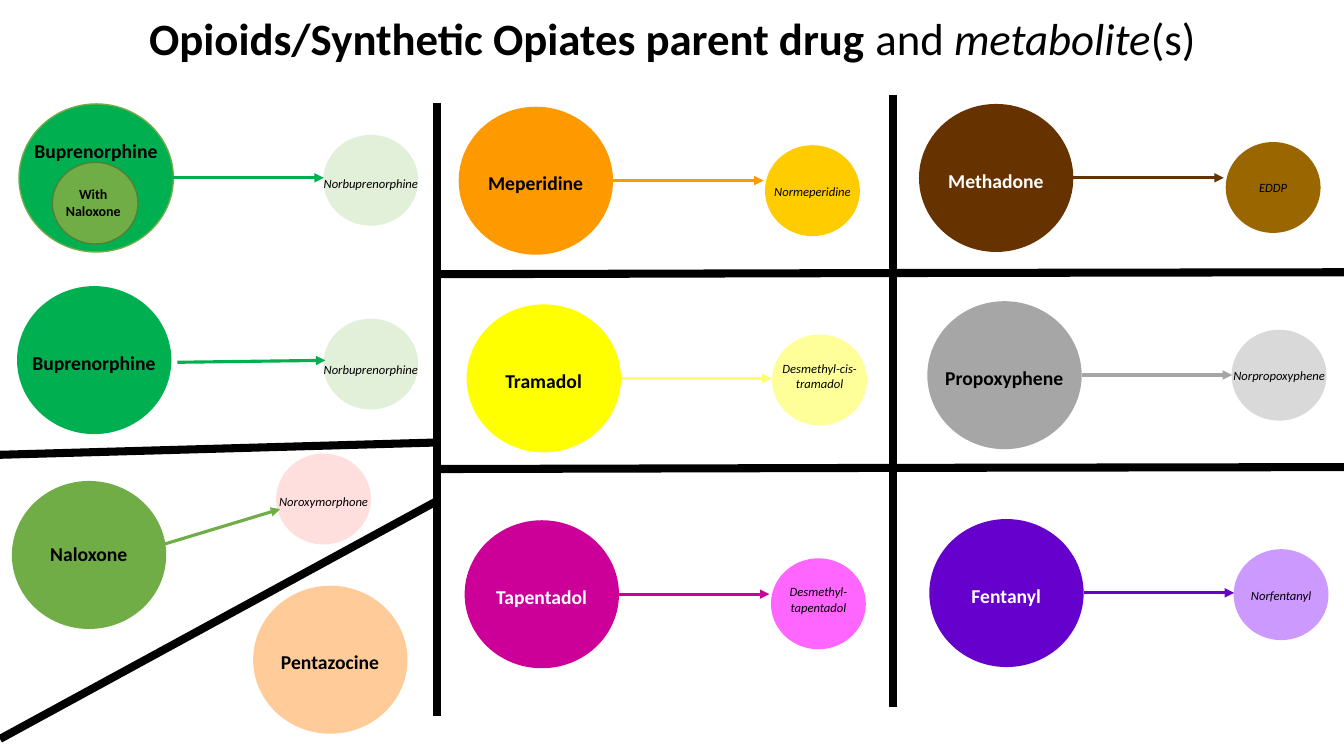
from lxml.etree import SubElement
from pptx import Presentation
from pptx.dml.color import RGBColor
from pptx.enum.shapes import MSO_CONNECTOR, MSO_SHAPE
from pptx.enum.text import MSO_ANCHOR, PP_ALIGN
from pptx.oxml.ns import qn
from pptx.util import Cm, Pt

PARENT_SIZE = (3.89, 3.73)
METABOLITE_SIZE = (2.39, 2.29)
NALOXONE_SIZE = (2.16, 2.06)
STRAIGHT_ARROW = (3.89, 1.86, 7.68, 1.86)
TITLE_FORMAT = {"size": Pt(32), "name": "Calibri"}
PARENT_FORMAT = {"size": Pt(14), "name": "Calibri", "bold": True}
ADDITIVE_FORMAT = {"size": Pt(10), "name": "Calibri", "bold": True}
METABOLITE_FORMAT = {"size": Pt(9), "name": "Calibri", "italic": True}

DRUGS = [
    {"name": "Buprenorphine", "box": (0.48, 2.62), "fill": "00B050", "outline": "70AD47",
     "label_top": 0.76, "additive": ["With", "Naloxone"],
     "metabolite": (["Norbuprenorphine"], 7.67, 0.78, "E2F0D9", 0.91)},
    {"name": "Buprenorphine", "box": (0.43, 7.21), "fill": "00B050",
     "arrow": (4.04, 1.92, 7.77, 1.87),
     "metabolite": (["Norbuprenorphine"], 7.72, 0.82, "E2F0D9", 0.97)},
    {"name": "Naloxone", "box": (0.3, 12.12), "fill": "70AD47", "label_top": 1.42,
     "arrow": (3.81, 1.6, 6.76, 0.71),
     "metabolite": (["Noroxymorphone"], 6.66, -0.69, "FFDFDD", 0.89)},
    {"name": "Pentazocine", "box": (6.38, 14.76), "fill": "FFCC99"},
    {"name": "Meperidine", "box": (11.56, 2.69), "fill": "FF9900",
     "metabolite": (["Normeperidine"], 7.72, 0.97, "FFCC00", 0.86)},
    {"name": "Tramadol", "box": (11.76, 7.67), "fill": "FFFF00", "arrow_color": "FFFF66",
     "metabolite": (["Desmethyl-cis-", "tramadol"], 7.7, 0.76, "FFFF99", 0.53)},
    {"name": "Tapentadol", "box": (11.71, 13.11), "fill": "CC0099", "text": "FFFFFF",
     "metabolite": (["Desmethyl-", "tapentadol"], 7.72, 0.96, "FF66FF", 0.53)},
    {"name": "Methadone", "box": (23.16, 2.62), "fill": "663300", "text": "FFFFFF",
     "metabolite": (["EDDP"], 7.73, 0.96, "996600", 0.84)},
    {"name": "Propoxyphene", "box": (23.37, 7.59), "fill": "A6A6A6",
     "metabolite": (["Norpropoxyphene"], 7.67, 0.72, "D9D9D9", 0.84)},
    {"name": "Fentanyl", "box": (23.42, 13.08), "fill": "6600CC", "text": "FFFFFF",
     "metabolite": (["Norfentanyl"], 7.67, 0.76, "CC99FF", 0.84)},
]


def color(value):
    return RGBColor.from_string(value)


def apply_format(font, values, font_color="000000"):
    for attribute, value in values.items():
        setattr(font, attribute, value)
    font.color.rgb = color(font_color)


def add_circle(slide, left, top, size, fill, outline=None):
    shape = slide.shapes.add_shape(MSO_SHAPE.OVAL, Cm(left), Cm(top), Cm(size[0]), Cm(size[1]))
    shape.shadow.inherit = False
    shape.fill.solid()
    shape.fill.fore_color.rgb = color(fill)
    if outline:
        shape.line.color.rgb = color(outline)
        shape.line.width = Pt(1)
    else:
        shape.line.fill.background()


def add_label(slide, left, top, width, height, lines, values, font_color="000000"):
    text_box = slide.shapes.add_textbox(Cm(left), Cm(top), Cm(width), Cm(height))
    frame = text_box.text_frame
    frame.word_wrap = True
    frame.text = "\n".join(lines)
    for paragraph in frame.paragraphs:
        paragraph.alignment = PP_ALIGN.CENTER
        for run in paragraph.runs:
            apply_format(run.font, values, font_color)


def add_line(slide, points, line_color, width, arrow=False):
    connector = slide.shapes.add_connector(MSO_CONNECTOR.STRAIGHT, *[Cm(point) for point in points])
    connector.line.color.rgb = color(line_color)
    connector.line.width = Pt(width)
    properties = connector._element.spPr
    if arrow:
        SubElement(properties.find(qn("a:ln")), qn("a:tailEnd"), type="triangle")
    SubElement(properties, qn("a:effectLst"))


def add_title(slide, left, top, width, height):
    text_box = slide.shapes.add_textbox(Cm(left), Cm(top), Cm(width), Cm(height))
    frame = text_box.text_frame
    frame.word_wrap = True
    frame.vertical_anchor = MSO_ANCHOR.MIDDLE
    paragraph = frame.paragraphs[0]
    paragraph.alignment = PP_ALIGN.CENTER
    paragraph.line_spacing = 0.9
    for text, style in [("Opioids/Synthetic Opiates parent drug", {"bold": True}),
                        (" and ", {}), ("metabolite", {"italic": True}), ("(s)", {})]:
        run = paragraph.add_run()
        run.text = text
        apply_format(run.font, {**TITLE_FORMAT, **style})


def add_dividers(slide, left, top, width, height):
    first, second = left + 11.02, left + 22.5
    right, bottom = left + width, top + height
    bars = [
        (first, top + 2.59, first, bottom - 1.02),
        (second, top + 2.39, second, bottom - 1.24),
        (first, top + 11.15, left, top + 11.46),
        (first, top + 12.62, left, bottom - 0.43),
    ]
    for row in (top + 6.88, top + 11.79):
        bars += [(second, row, first, row + 0.03), (right, row - 0.02, second, row)]
    for bar in bars:
        add_line(slide, bar, "000000", 5.75)


def add_metabolite(slide, left, top, lines, fill, label_top):
    add_circle(slide, left, top, METABOLITE_SIZE, fill)
    add_label(slide, left - 1.18, top + label_top, 4.75, 0.64 + 0.38 * (len(lines) - 1),
              lines, METABOLITE_FORMAT)


def add_drug(slide, drug):
    left, top = drug["box"]
    add_circle(slide, left, top, PARENT_SIZE, drug["fill"], drug.get("outline"))
    add_label(slide, left - 0.13, top + drug.get("label_top", 1.5), 4.14, 0.86,
              [drug["name"]], PARENT_FORMAT, drug.get("text", "000000"))
    if "additive" in drug:
        add_circle(slide, left + 0.84, top + 1.47, NALOXONE_SIZE, "70AD47", "538035")
        add_label(slide, left + 0.51, top + 1.93, 2.72, 1.12, drug["additive"], ADDITIVE_FORMAT)
    if "metabolite" in drug:
        lines, across, down, fill, label_top = drug["metabolite"]
        add_metabolite(slide, left + across, top + down, lines, fill, label_top)
        start_x, start_y, end_x, end_y = drug.get("arrow", STRAIGHT_ARROW)
        points = (left + start_x, top + start_y, left + end_x, top + end_y)
        add_line(slide, points, drug.get("arrow_color", drug["fill"]), 2.25, arrow=True)


def main():
    presentation = Presentation()
    presentation.slide_width = Cm(33.87)
    presentation.slide_height = Cm(19.05)
    slide = presentation.slides.add_slide(presentation.slide_layouts[6])
    add_title(slide, 2.34, 0.43, 29.21, 1.19)
    add_dividers(slide, 0, 0, 33.87, 19.05)
    for drug in DRUGS:
        add_drug(slide, drug)
    presentation.save("out.pptx")


if __name__ == "__main__":
    main()
